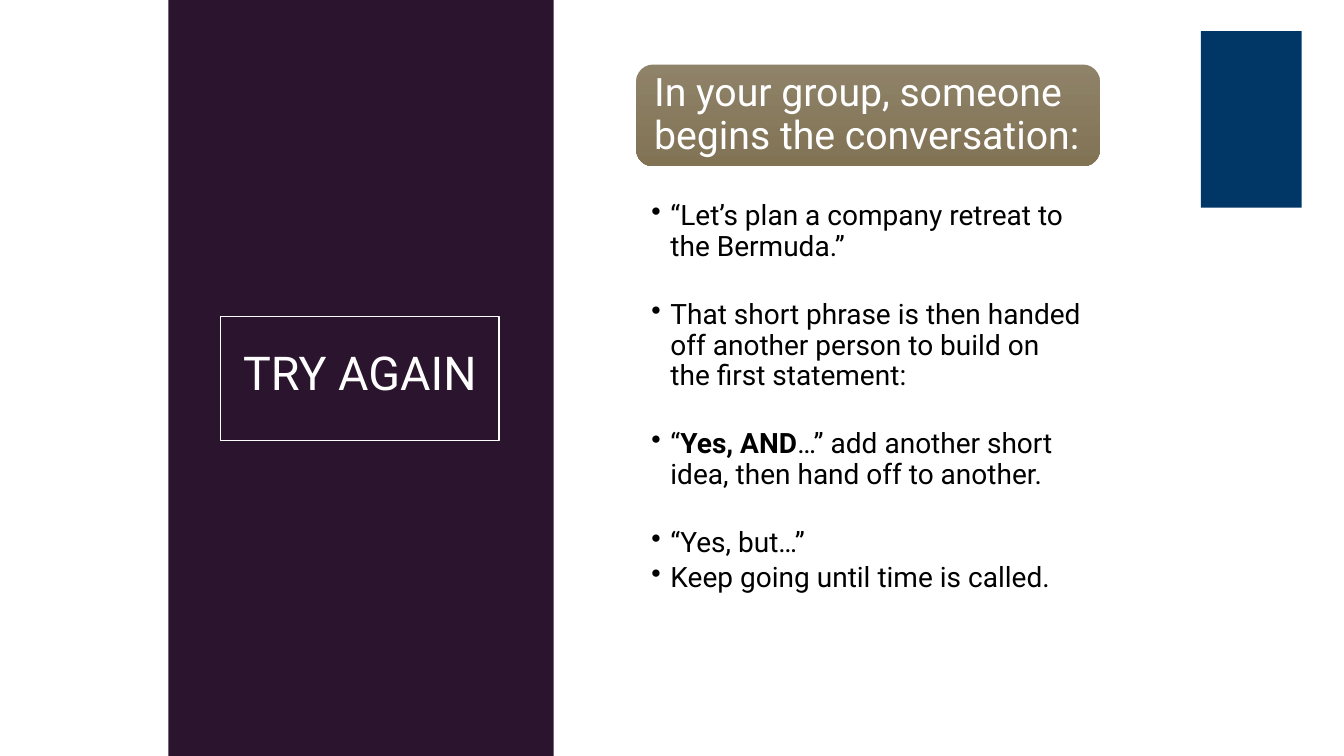
"""Build the "Try again" improvisation exercise slide."""
from dataclasses import dataclass, field
from typing import Optional

from lxml.etree import SubElement
from pptx import Presentation
from pptx.dml.color import RGBColor
from pptx.enum.shapes import MSO_SHAPE
from pptx.enum.text import MSO_ANCHOR, PP_ALIGN
from pptx.oxml.ns import qn
from pptx.util import Inches, Pt

COLORS = {
    "navy": "003767",
    "plum": "2B142D",
    "white": "FFFFFF",
    "black": "000000",
    "tan": "8E8268",
    "brown": "827355",
}
FONT = "Roboto"
BULLET_INDENT = 0.19


@dataclass
class Paragraph:
    spans: list[tuple[str, bool]]
    size: float
    color: str
    bullet: bool = False
    format: dict = field(default_factory=dict)


@dataclass
class Block:
    left: float
    top: float
    width: float
    height: float
    shape: MSO_SHAPE = MSO_SHAPE.RECTANGLE
    fill: tuple[str, ...] = ()
    line: Optional[str] = None
    insets: tuple[float, float] = (0, 0)
    anchor: MSO_ANCHOR = MSO_ANCHOR.MIDDLE
    paragraphs: list[Paragraph] = field(default_factory=list)


def rgb(name: str) -> RGBColor:
    return RGBColor.from_string(COLORS[name])


def bullet_item(*spans: tuple[str, bool], gap: float = 27.5) -> Paragraph:
    return Paragraph(list(spans), 20, "black", True,
                     {"line_spacing": 0.9, "space_before": Pt(gap)})


BLOCKS = [
    Block(11.91, 0.31, 1, 1.75, fill=("navy",)),
    Block(1.67, 0, 3.82, 7.5, fill=("plum",)),
    Block(2.19, 3.14, 2.76, 1.23, line="white", insets=(0.15, 0.15), paragraphs=[
        Paragraph([("TRY AGAIN", False)], 33.3, "white", format={
            "alignment": PP_ALIGN.CENTER, "line_spacing": 0.7, "space_after": Pt(4.5)}),
    ]),
    Block(6.31, 0.64, 4.6, 1.01, MSO_SHAPE.ROUNDED_RECTANGLE, ("tan", "brown"),
          insets=(0.13, 0.13), paragraphs=[
        Paragraph([("In your group, someone begins the conversation:", False)],
                  28, "white", format={"line_spacing": 0.9}),
    ]),
    Block(6.31, 1.98, 4.6, 4.28, insets=(0.15, 0.02), anchor=MSO_ANCHOR.TOP, paragraphs=[
        bullet_item(("“Let’s plan a company retreat to the Bermuda.”", False), gap=0),
        bullet_item(("That short phrase is then handed off another person "
                     "to build on the first statement:", False)),
        bullet_item(("“", False), ("Yes, AND", True),
                    ("…” add another short idea, then hand off to another.", False)),
        bullet_item(("“Yes, but…”", False)),
        bullet_item(("Keep going until time is called.", False), gap=3),
    ]),
]


def add_bullet(para, color: str) -> None:
    properties = para._p.get_or_add_pPr()
    properties.set("marL", str(Inches(BULLET_INDENT)))
    properties.set("indent", str(-Inches(BULLET_INDENT)))
    bullet_color = SubElement(properties, qn("a:buClr"))
    SubElement(bullet_color, qn("a:srgbClr")).set("val", COLORS[color])
    SubElement(properties, qn("a:buChar")).set("char", "•")


def write_paragraph(para, content: Paragraph) -> None:
    for name, value in ({"alignment": PP_ALIGN.LEFT} | content.format).items():
        setattr(para, name, value)
    if content.bullet:
        add_bullet(para, content.color)
    for text, bold in content.spans:
        span = para.add_run()
        span.text = text
        for name, value in {"name": FONT, "size": Pt(content.size), "bold": bold}.items():
            setattr(span.font, name, value)
        span.font.color.rgb = rgb(content.color)


def paint(box, block: Block) -> None:
    box.shadow.inherit = False
    if len(block.fill) == 2:
        box.fill.gradient()
        box.fill.gradient_angle = 270
        for stop, color in zip(box.fill.gradient_stops, block.fill):
            stop.color.rgb = rgb(color)
    elif block.fill:
        box.fill.solid()
        box.fill.fore_color.rgb = rgb(block.fill[0])
    else:
        box.fill.background()
    if block.line:
        box.line.color.rgb = rgb(block.line)
        box.line.width = Pt(0.75)
    else:
        box.line.fill.background()


def add_block(page, block: Block) -> None:
    position = map(Inches, (block.left, block.top, block.width, block.height))
    box = page.shapes.add_shape(block.shape, *position)
    paint(box, block)
    frame = box.text_frame
    side, edge = map(Inches, block.insets)
    frame_format = {
        "word_wrap": True, "vertical_anchor": block.anchor,
        "margin_left": side, "margin_right": side,
        "margin_top": edge, "margin_bottom": edge,
    }
    for name, value in frame_format.items():
        setattr(frame, name, value)
    for index, content in enumerate(block.paragraphs):
        para = frame.add_paragraph() if index else frame.paragraphs[0]
        write_paragraph(para, content)


def main() -> None:
    deck = Presentation()
    deck.slide_width, deck.slide_height = Inches(13.33), Inches(7.5)
    page = deck.slides.add_slide(deck.slide_layouts[6])
    for block in BLOCKS:
        add_block(page, block)
    deck.save("out.pptx")


if __name__ == "__main__":
    main()
